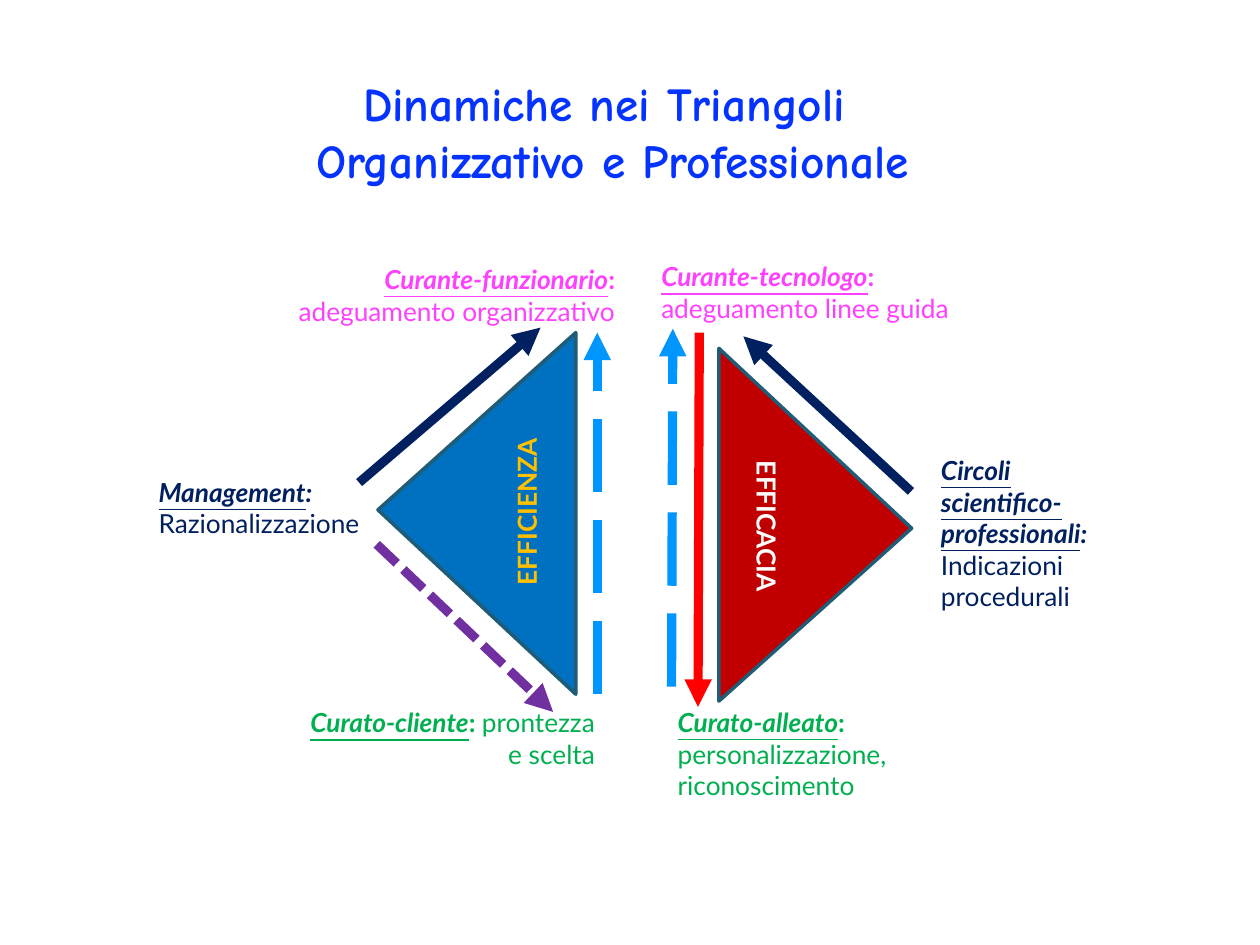
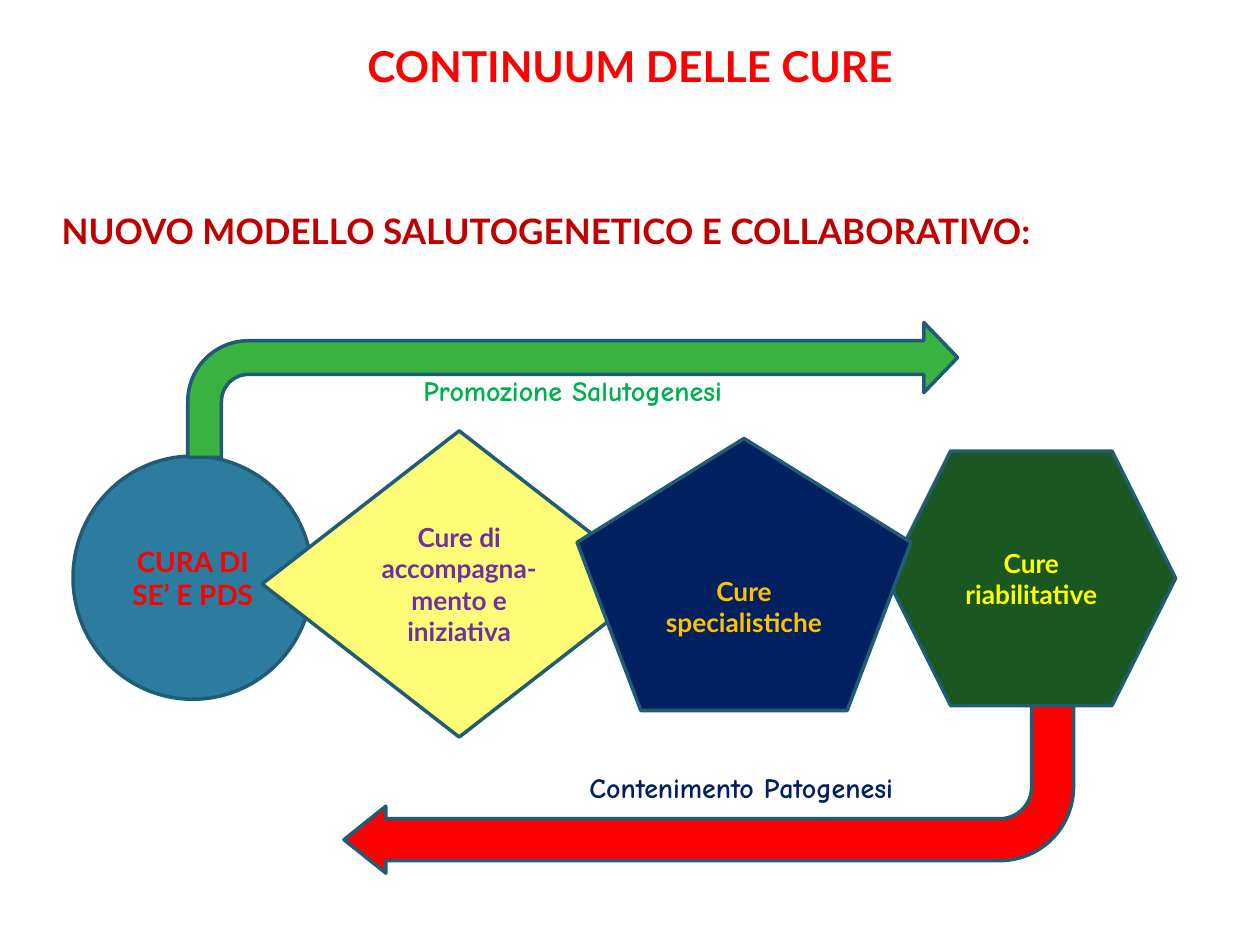
import pptx
import pptx.util
import pptx.dml.color
import pptx.enum.dml
import pptx.enum.shapes
import pptx.enum.text
import pptx.oxml.ns
import lxml.etree

RGBColor = pptx.dml.color.RGBColor
SHAPE = pptx.enum.shapes.MSO_SHAPE
ALIGN = pptx.enum.text.PP_ALIGN
ANCHOR = pptx.enum.text.MSO_ANCHOR
DASH = pptx.enum.dml.MSO_LINE

WHITE = RGBColor(0xFF, 0xFF, 0xFF)
OUTLINE = RGBColor(0x21, 0x5C, 0x76)
TITLE_BLUE = RGBColor(0x04, 0x32, 0xFF)
BLUE = RGBColor(0x00, 0x70, 0xC0)
SKY = RGBColor(0x00, 0x96, 0xFF)
TEAL = RGBColor(0x2C, 0x7C, 0x9F)
NAVY = RGBColor(0x00, 0x20, 0x60)
PURPLE = RGBColor(0x70, 0x30, 0xA0)
PINK = RGBColor(0xFF, 0x40, 0xFF)
RED = RGBColor(0xFF, 0x00, 0x00)
DARK_RED = RGBColor(0xC0, 0x00, 0x00)
GOLD = RGBColor(0xFF, 0xC0, 0x00)
YELLOW = RGBColor(0xFF, 0xFF, 0x00)
PALE_YELLOW = RGBColor(0xFF, 0xFD, 0x78)
GREEN = RGBColor(0x00, 0xB0, 0x50)
ARROW_GREEN = RGBColor(0x39, 0xB2, 0x3F)
DARK_GREEN = RGBColor(0x1B, 0x58, 0x21)

BODY_FONT = "Lato"
COMIC_FONT = "Comic Neue"
COLUMNS, ROWS = 100, 75
CELL = pptx.util.Inches(0.1)


def grid(*cells):
    return [round(cell * CELL) for cell in cells]


def write(para, text, color, size=15, font=BODY_FONT, bold=True, italic=False, underline=False):
    for index, line in enumerate(text.split("\n")):
        if index:
            para.add_line_break()
        span = para.add_run()
        span.text = line
        span.font.name = font
        span.font.size = pptx.util.Pt(size)
        span.font.color.rgb = color
        span.font.bold = bold
        span.font.italic = italic
        span.font.underline = underline


def add_box(page, area, anchor=ANCHOR.TOP, align=ALIGN.LEFT):
    frame = page.shapes.add_textbox(*grid(*area)).text_frame
    frame.word_wrap = True
    frame.vertical_anchor = anchor
    frame.paragraphs[0].alignment = align
    return frame


def add_title(page, area, text, **style):
    frame = add_box(page, area, ANCHOR.BOTTOM, ALIGN.CENTER)
    write(frame.paragraphs[0], text, **style)


def add_label(page, area, name, detail, color, align=ALIGN.LEFT, inline=True, slanted_colon=False):
    frame = add_box(page, area, align=align)
    para = frame.paragraphs[0]
    write(para, name, color, italic=True, underline=True)
    write(para, ": " if inline else ":", color, italic=slanted_colon)
    if not inline:
        para = frame.add_paragraph()
        para.alignment = align
    write(para, detail, color, bold=False)


def add_figure(page, kind, area, fill, text="", rotation=0, adjustments=(), **style):
    figure = page.shapes.add_shape(kind, *grid(*area))
    figure.shadow.inherit = False
    figure.rotation = rotation
    figure.fill.solid()
    figure.fill.fore_color.rgb = fill
    figure.line.color.rgb = OUTLINE
    figure.line.width = pptx.util.Pt(2)
    for index, value in enumerate(adjustments):
        figure.adjustments[index] = value
    if text:
        frame = figure.text_frame
        frame.word_wrap = True
        frame.vertical_anchor = ANCHOR.MIDDLE
        frame.paragraphs[0].alignment = ALIGN.CENTER
        write(frame.paragraphs[0], text, **style)


def add_arrow(page, start, end, color, dash=None):
    arrow = page.shapes.add_connector(
        pptx.enum.shapes.MSO_CONNECTOR.STRAIGHT, *grid(*start, *end))
    arrow.line.color.rgb = color
    arrow.line.width = pptx.util.Pt(5.25)
    if dash:
        arrow.line.dash_style = dash
    qn = pptx.oxml.ns.qn
    lxml.etree.SubElement(arrow.line._get_or_add_ln(), qn("a:tailEnd"), type="triangle")
    lxml.etree.SubElement(arrow._element.spPr, qn("a:effectLst"))


def build_triangles(page):
    add_title(page, (14.7, 5.4, 67.8, 10), "Dinamiche nei Triangoli \nOrganizzativo e Professionale",
              color=TITLE_BLUE, size=27, font=COMIC_FONT)

    for area, fill, rotation, text, color in (
        ((23.5, 32.9, 28.7, 15.7), BLUE, 270, "EFFICIENZA", GOLD),
        ((50.7, 34, 28, 15.3), DARK_RED, 90, "EFFICACIA", WHITE),
    ):
        add_figure(page, SHAPE.ISOSCELES_TRIANGLE, area, fill, text, rotation, (0.51,), color=color)

    add_label(page, (11.6, 37.3, 21.1, 6.1), "Management", "Razionalizzazione", NAVY,
              inline=False, slanted_colon=True)
    add_label(page, (18.8, 20.4, 31, 6.1), "Curante-funzionario", "adeguamento organizzativo",
              PINK, ALIGN.RIGHT)
    add_label(page, (51.5, 20.2, 29.3, 6.1), "Curante-tecnologo", "adeguamento linee guida", PINK)
    add_label(page, (23.4, 55.6, 24.8, 6.1), "Curato-cliente", "prontezza e scelta",
              GREEN, ALIGN.RIGHT)
    add_label(page, (52.8, 55.6, 23.3, 8.6), "Curato-alleato", "personalizzazione, riconoscimento",
              GREEN, inline=False)
    add_label(page, (73.7, 35.6, 16, 13.6), "Circoli scientifico- professionali",
              "Indicazioni procedurali", NAVY, slanted_colon=True)

    for start, end, color, dash in (
        ((72.3, 39), (59, 26.7), NAVY, None),
        ((28.5, 38.3), (42.9, 26), NAVY, None),
        ((29.9, 43.2), (43.9, 56.5), PURPLE, DASH.SQUARE_DOT),
        ((55.5, 26.4), (55.4, 56.1), RED, None),
        ((47.4, 55.1), (47.4, 26.4), SKY, DASH.LONG_DASH),
        ((53.3, 54.5), (53.4, 26.1), SKY, DASH.LONG_DASH),
    ):
        add_arrow(page, start, end, color, dash)


def build_continuum(page):
    add_title(page, (6.9, 3.5, 86.2, 4.2), "CONTINUUM DELLE CURE", color=RED, size=24.3)
    heading = add_box(page, (3.9, 16.1, 93.2, 57.1))
    write(heading.paragraphs[0], "NUOVO MODELLO SALUTOGENETICO E COLLABORATIVO:",
          DARK_RED, size=20)

    for kind, area, fill, text, color, size in (
        (SHAPE.OVAL, (5.8, 36.2, 19, 19.3), TEAL, "CURA DI SE’ E PDS", RED, 16),
        (SHAPE.DIAMOND, (20.8, 34.2, 31.3, 24.3), PALE_YELLOW,
         "Cure di accompagna-mento e iniziativa", PURPLE, 15),
        (SHAPE.HEXAGON, (70.4, 35.8, 22.9, 20.2), DARK_GREEN, "Cure riabilitative", YELLOW, 15),
        (SHAPE.REGULAR_PENTAGON, (45.8, 34.8, 26.5, 21.6), NAVY, "Cure specialistiche", GOLD, 15),
    ):
        add_figure(page, kind, area, fill, text, color=color, size=size)

    add_figure(page, SHAPE.BENT_ARROW, (14.9, 25.6, 61.1, 10.7), ARROW_GREEN,
               "Promozione Salutogenesi", adjustments=(0.25, 0.26, 0.25, 0.45),
               color=GREEN, size=16, font=COMIC_FONT)
    add_figure(page, SHAPE.BENT_ARROW, (27.3, 56, 57.9, 13.3), RED, rotation=180,
               adjustments=(0.25, 0.2, 0.25, 0.44))
    caption = add_box(page, (45.8, 60.7, 36.8, 3.7))
    write(caption.paragraphs[0], "Contenimento Patogenesi", NAVY, size=16, font=COMIC_FONT)


def main():
    deck = pptx.Presentation()
    deck.slide_width, deck.slide_height = grid(COLUMNS, ROWS)
    for build in (build_triangles, build_continuum):
        build(deck.slides.add_slide(deck.slide_layouts[6]))
    deck.save("out.pptx")


if __name__ == "__main__":
    main()
